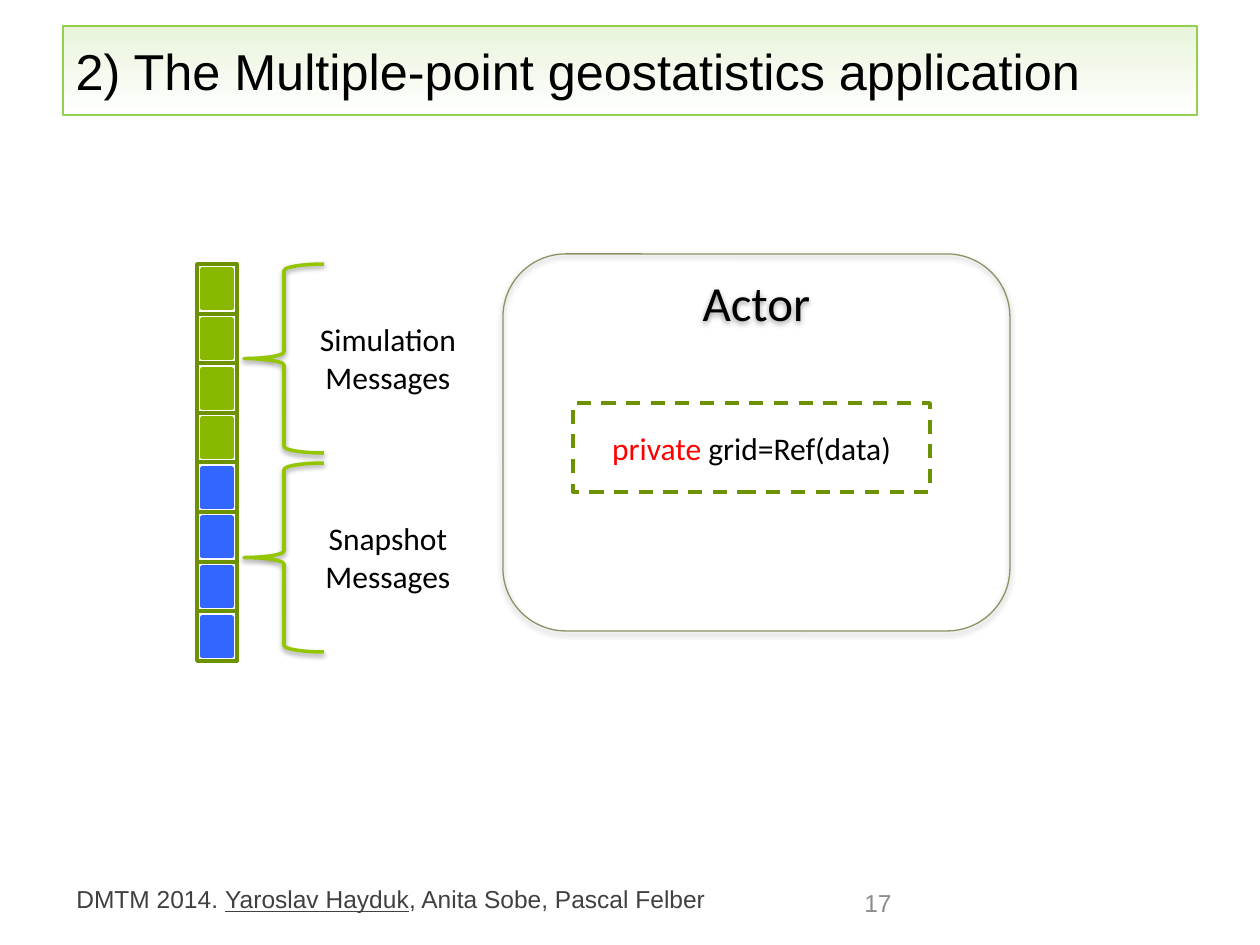
from lxml.etree import SubElement
from pptx import Presentation
from pptx.dml.color import RGBColor
from pptx.enum.dml import MSO_LINE
from pptx.enum.shapes import MSO_CONNECTOR as Connector, MSO_SHAPE as Shape
from pptx.enum.text import MSO_ANCHOR as Anchor, MSO_AUTO_SIZE as AutoSize, PP_ALIGN as Align
from pptx.oxml.ns import qn
from pptx.util import Emu, Inches, Pt

SCALE = 914400 // 126
BLACK, GREY, RED = "000000", "404040", "FF0000"
LIME, OLIVE, GREEN, BLUE = "94C600", "6D9200", "88B900", "3366FF"


def px(*lengths):
    return [Emu(length * SCALE) for length in lengths]


def color(value):
    return RGBColor.from_string(value)


class SlideBuilder:
    def __init__(self, slide, body_font="Calibri", heading_font="Arial"):
        self.slide = slide
        self.body_font = body_font
        self.heading_font = heading_font

    def set_text(self, frame, lines, size, font=None, align=Align.CENTER, anchor=Anchor.TOP):
        """Each line is a list of (text, colour, underlined) runs."""
        frame.word_wrap = True
        frame.auto_size = AutoSize.NONE
        frame.vertical_anchor = anchor
        for index, runs in enumerate(lines):
            para = frame.add_paragraph() if index else frame.paragraphs[0]
            para.alignment = align
            para.font.size = Pt(size)
            para.font.name = font or self.body_font
            for text, ink, underlined in runs:
                span = para.add_run()
                span.text = text
                span.font.color.rgb = color(ink)
                if underlined:
                    span.font.underline = True

    def title(self, text, *place):
        title = self.slide.shapes.title
        title.left, title.top, title.width, title.height = px(*place)
        title.fill.gradient()
        title.fill.gradient_angle = 90
        for stop, shade, position in zip(title.fill.gradient_stops, ("FFFFFF", "E9F4DB"), (0, 1)):
            stop.color.rgb = color(shade)
            stop.position = position
        title.line.color.rgb = color("92D050")
        title.line.width = Pt(1)
        self.set_text(title.text_frame, [[(text, BLACK, False)]], 28.8,
                      self.heading_font, Align.LEFT, Anchor.MIDDLE)

    def text(self, lines, *place, size=18, **style):
        box = self.slide.shapes.add_textbox(*px(*place))
        self.set_text(box.text_frame, lines, size, **style)

    def shape(self, kind, *place, line, weight=2, fill=None):
        shape = self.slide.shapes.add_shape(kind, *px(*place))
        shape.shadow.inherit = False
        if fill:
            shape.fill.solid()
            shape.fill.fore_color.rgb = color(fill)
        else:
            shape.fill.background()
        shape.line.color.rgb = color(line)
        shape.line.width = Pt(weight)
        return shape

    def drop_shadow(self, shape):
        effects = shape._element.spPr.find(qn("a:effectLst"))
        shadow = SubElement(effects, qn("a:outerShdw"), blurRad=str(Pt(3.1)),
                            dist=str(Pt(1.6)), dir="5400000", rotWithShape="0")
        ink = SubElement(shadow, qn("a:srgbClr"), val=BLACK)
        SubElement(ink, qn("a:alpha"), val="38000")

    def brace(self, *place):
        brace = self.shape(Shape.RIGHT_BRACE, *place, line=LIME)
        brace.rotation = 180
        self.drop_shadow(brace)

    def divider(self, left, right, y):
        line = self.slide.shapes.add_connector(Connector.STRAIGHT, *px(left, y, right, y))
        line.line.color.rgb = color(OLIVE)
        line.line.width = Pt(2)
        SubElement(line._element.spPr, qn("a:effectLst"))


def draw_queue(page, left, top, width, height, cell_colors):
    cell_width, cell_height = 30, 39
    pitch = height / len(cell_colors)
    page.shape(Shape.RECTANGLE, left, top, width, height, line=OLIVE)
    for index, fill in enumerate(cell_colors):
        if index:
            page.divider(left, left + width, round(top + index * pitch))
        cell_top = round(top + (index + 0.5) * pitch - cell_height / 2)
        page.shape(Shape.RECTANGLE, left + (width - cell_width) // 2, cell_top,
                   cell_width, cell_height, line=fill, fill=fill)


def main():
    deck = Presentation()
    deck.slide_width, deck.slide_height = Inches(10), Inches(7.5)
    page = SlideBuilder(deck.slides.add_slide(deck.slide_layouts[5]))

    page.text([[("DMTM 2014. ", GREY, False), ("Yaroslav Hayduk", GREY, True),
                (", Anita Sobe, Pascal Felber", GREY, False)]],
              64, 878, 745, 43, size=14, font="Arial", align=Align.LEFT)
    page.title("2) The Multiple-point geostatistics application", 63, 26, 1134, 89)
    page.text([[("17", "8C8C8C", False)]], 828, 878, 100, 50,
              size=14, font="Arial", anchor=Anchor.MIDDLE)

    actor = page.shape(Shape.ROUNDED_RECTANGLE, 503, 254, 507, 377, line="8E9262", weight=0.75)
    page.drop_shadow(actor)
    actor.text_frame.margin_top = actor.text_frame.margin_bottom = 0
    page.set_text(actor.text_frame, [[("Actor", BLACK, False)]], 28)

    state = page.shape(Shape.RECTANGLE, 573, 403, 357, 89, line=OLIVE)
    state.line.dash_style = MSO_LINE.DASH
    page.set_text(state.text_frame, [[("private ", RED, False), ("grid=Ref(data)", BLACK, False)]],
                  18, anchor=Anchor.MIDDLE)

    for name, top in (("Simulation", 264), ("Snapshot", 463)):
        page.brace(244, top, 80, 189)
        page.text([[(word, BLACK, False)] for word in (name, "Messages")],
                  274, top + 50, 228, 89)

    draw_queue(page, 197, 264, 40, 397, [GREEN] * 4 + [BLUE] * 4)
    deck.save("out.pptx")


if __name__ == "__main__":
    main()
